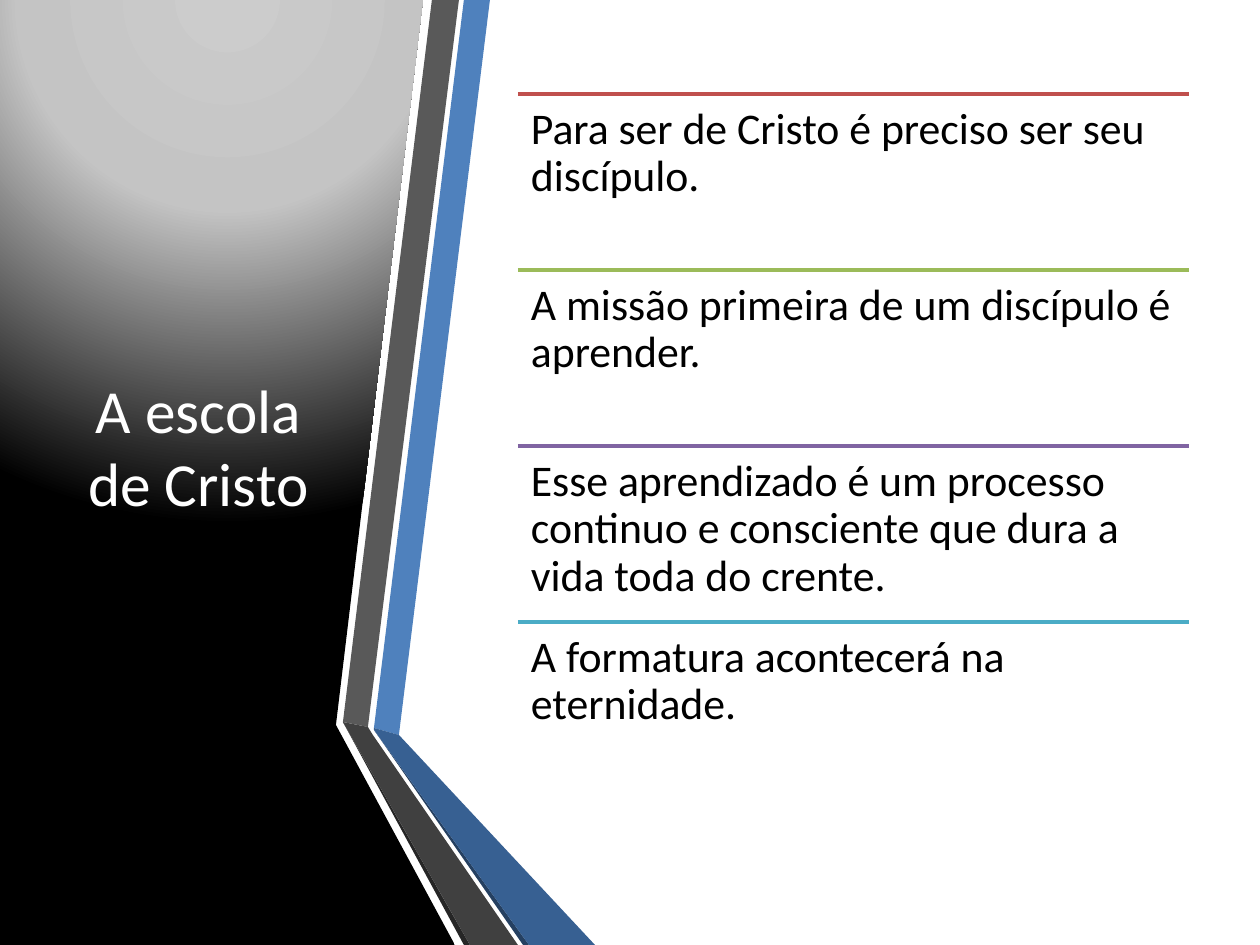
"""Build the "A escola de Cristo" slide with a folded ribbon and four ruled statements."""
import lxml.etree
import pptx
import pptx.dml.color
import pptx.enum.shapes
import pptx.enum.text
import pptx.oxml
import pptx.oxml.ns
import pptx.util

RGB = pptx.dml.color.RGBColor
WHITE, BLACK = RGB(255, 255, 255), RGB(0, 0, 0)
BLUE, BLUE_FOLD, NAVY = RGB(0x4F, 0x81, 0xBD), RGB(0x37, 0x60, 0x92), RGB(0x25, 0x40, 0x61)
GREY, GREY_FOLD, CHARCOAL = RGB(0x59, 0x59, 0x59), RGB(0x40, 0x40, 0x40), RGB(0x26, 0x26, 0x26)
RED, GREEN = RGB(0xC0, 0x50, 0x4D), RGB(0x9B, 0xBB, 0x59)
PURPLE, TEAL = RGB(0x80, 0x64, 0xA2), RGB(0x4B, 0xAC, 0xC6)
FONT = "Calibri"
SCALE = 914400 / 126

TITLE = "A escola de Cristo"
STATEMENTS = [
    ("Para ser de Cristo é preciso ser seu discípulo.", RED),
    ("A missão primeira de um discípulo é aprender.", GREEN),
    ("Esse aprendizado é um processo continuo e consciente que dura a vida toda do crente.", PURPLE),
    ("A formatura acontecerá na eternidade.", TEAL),
]
PANEL = [(333, 0), (423, 0), (336, 725), (455, 945), (0, 945), (0, 0)]
RIBBONS = [
    (BLUE, [(374, 728), (399, 735), (490, 0), (464, 0)]),
    (GREY, [(459, 0), (432, 0), (343, 722), (368, 727)]),
    (CHARCOAL, [(343, 722), (464, 945), (470, 945)]),
    (NAVY, [(374, 730), (523, 945), (529, 945)]),
    (BLUE_FOLD, [(374, 730), (529, 945), (595, 945), (399, 735), (374, 728)]),
    (GREY_FOLD, [(518, 945), (373, 735), (368, 727), (343, 722), (470, 945)]),
]
PANEL_STOPS = [(0, "CCCCCC"), (40, "C4C4C4"), (100, "000000")]
LIST_LEFT, LIST_TOP, LIST_WIDTH, ROW_HEIGHT = 518, 94, 671, 176


def px(*lengths):
    return [pptx.util.Emu(round(length * SCALE)) for length in lengths]


def add_outline(shapes, points, color):
    builder = shapes.build_freeform(*points[0], scale=SCALE)
    builder.add_line_segments(points[1:], close=True)
    outline = builder.convert_to_shape()
    outline.shadow.inherit = False
    outline.fill.solid()
    outline.fill.fore_color.rgb = color
    outline.line.fill.background()
    return outline


def apply_glow(panel):
    stops = "".join(
        f'<a:gs pos="{position * 1000}"><a:srgbClr val="{color}"/></a:gs>'
        for position, color in PANEL_STOPS
    )
    glow = pptx.oxml.parse_xml(
        f'<a:gradFill {pptx.oxml.ns.nsdecls("a")} rotWithShape="1"><a:gsLst>{stops}</a:gsLst>'
        '<a:path path="circle"><a:fillToRect l="50000" t="-80000" r="50000" b="180000"/></a:path>'
        "</a:gradFill>"
    )
    solid = panel.element.spPr.find(pptx.oxml.ns.qn("a:solidFill"))
    solid.getparent().replace(solid, glow)


def format_text(paragraph, size, color):
    paragraph.font.name = FONT
    paragraph.font.size = pptx.util.Pt(size)
    paragraph.font.color.rgb = color


def add_statement(shapes, index, wording, color):
    top = LIST_TOP + index * ROW_HEIGHT
    rule = shapes.add_connector(
        pptx.enum.shapes.MSO_CONNECTOR.STRAIGHT,
        *px(LIST_LEFT, top, LIST_LEFT + LIST_WIDTH, top),
    )
    rule.line.color.rgb = color
    rule.line.width = pptx.util.Pt(2)
    lxml.etree.SubElement(rule.element.spPr, pptx.oxml.ns.qn("a:effectLst"))

    statement = shapes.add_textbox(*px(LIST_LEFT, top, LIST_WIDTH, ROW_HEIGHT)).text_frame
    statement.word_wrap = True
    inset, = px(13)
    statement.margin_left = statement.margin_right = inset
    statement.margin_top = statement.margin_bottom = inset
    statement.text = wording
    statement.paragraphs[0].line_spacing = 0.9
    format_text(statement.paragraphs[0], 25, BLACK)


def main():
    deck = pptx.Presentation()
    deck.slide_width, deck.slide_height = px(1260, 945)
    slide = deck.slides.add_slide(deck.slide_layouts[5])
    slide.background.fill.solid()
    slide.background.fill.fore_color.rgb = WHITE

    apply_glow(add_outline(slide.shapes, PANEL, BLACK))
    ribbon_group = slide.shapes.add_group_shape()
    for color, points in RIBBONS:
        add_outline(ribbon_group.shapes, points, color)

    title = slide.shapes.title
    title.left, title.top, title.width, title.height = px(55, 94, 287, 703)
    title.text_frame.text = TITLE
    title.text_frame.word_wrap = True
    title.text_frame.auto_size = pptx.enum.text.MSO_AUTO_SIZE.NONE
    title.text_frame.vertical_anchor = pptx.enum.text.MSO_ANCHOR.MIDDLE
    title.text_frame.paragraphs[0].alignment = pptx.enum.text.PP_ALIGN.CENTER
    format_text(title.text_frame.paragraphs[0], 35, WHITE)
    ribbon_group.element.addnext(title.element)

    statement_group = slide.shapes.add_group_shape()
    for index, (wording, color) in enumerate(STATEMENTS):
        add_statement(statement_group.shapes, index, wording, color)

    deck.save("out.pptx")


if __name__ == "__main__":
    main()
